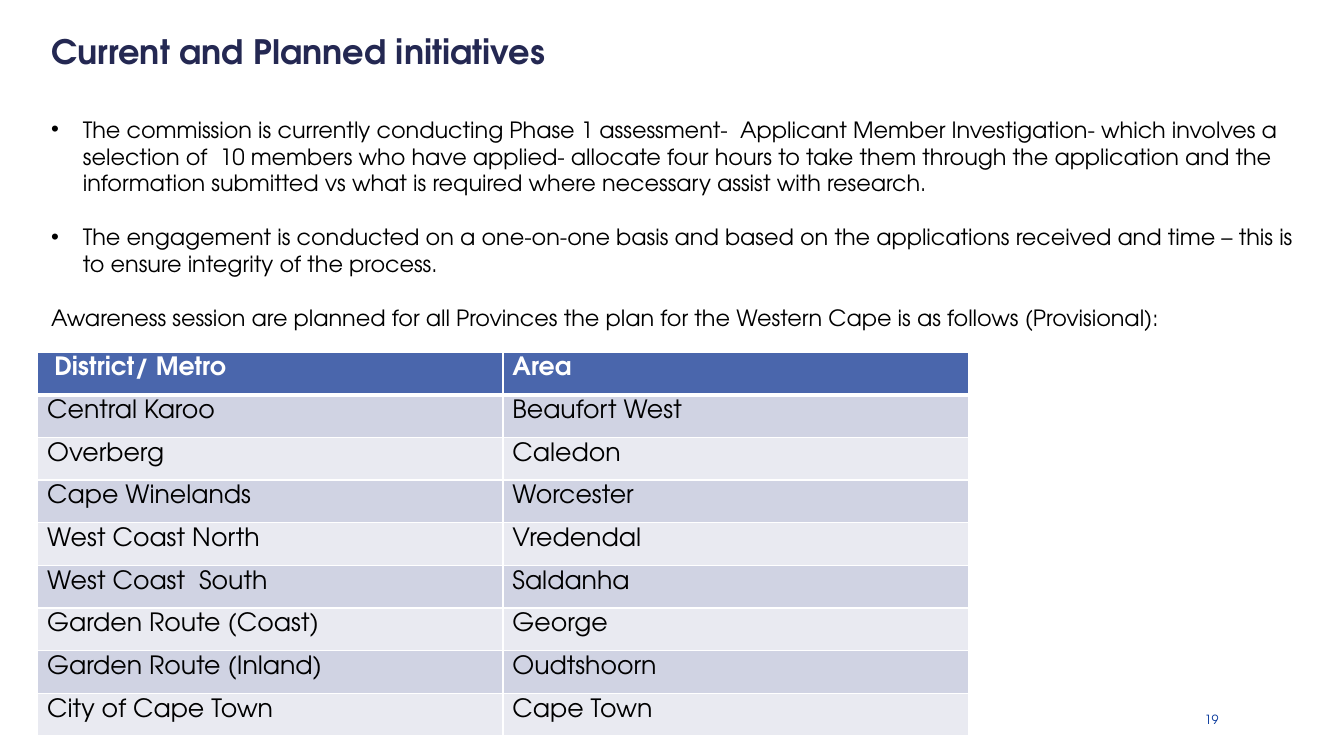
import pptx
import pptx.util
import pptx.dml.color
import pptx.enum.text
import pptx.oxml
import pptx.oxml.ns

Cm = pptx.util.Cm
Pt = pptx.util.Pt
RGBColor = pptx.dml.color.RGBColor
ALIGN = pptx.enum.text.PP_ALIGN
ANCHOR = pptx.enum.text.MSO_ANCHOR

FONT = "TeX Gyre Adventor"
NAVY = RGBColor(0x24, 0x28, 0x52)
BLUE = RGBColor(0x4A, 0x66, 0xAC)
LINK = RGBColor(0x00, 0x33, 0x99)
BLACK = RGBColor(0, 0, 0)
WHITE = RGBColor(0xFF, 0xFF, 0xFF)
DARK = RGBColor(0xD0, 0xD3, 0xE3)
LIGHT = RGBColor(0xE9, 0xEA, 0xF1)
NS = pptx.oxml.ns.nsdecls("a")


def write(para, text, size=16, color=BLACK, bold=False, align=ALIGN.LEFT, bullet=False):
    if bullet:
        props = para._p.get_or_add_pPr()
        props.set("marL", str(Cm(0.8)))
        props.set("indent", str(-Cm(0.8)))
        props.append(pptx.oxml.parse_xml(f'<a:buFont {NS} typeface="Arial"/>'))
        props.append(pptx.oxml.parse_xml(f'<a:buChar {NS} char="•"/>'))
    para.alignment = align
    run = para.add_run()
    run.text = text
    run.font.name = FONT
    run.font.size = Pt(size)
    run.font.bold = bold
    run.font.color.rgb = color


def place(shape, left, top, width, height, anchor, wrap=True, foot=0.2):
    shape.left, shape.top = Cm(left), Cm(top)
    shape.width, shape.height = Cm(width), Cm(height)
    frame = shape.text_frame
    frame.auto_size = pptx.enum.text.MSO_AUTO_SIZE.NONE
    frame.word_wrap = wrap
    frame.vertical_anchor = anchor
    frame.margin_left = frame.margin_top = Cm(0.2)
    frame.margin_right = frame.margin_bottom = Cm(foot)
    return frame


deck = pptx.Presentation()
deck.slide_width = Cm(33.87)
deck.slide_height = Cm(19.05)
slide = deck.slides.add_slide(deck.slide_layouts[5])

title = place(slide.shapes.title, 1.09, 0.51, 31.85, 1.55, ANCHOR.MIDDLE, wrap=False)
write(title.paragraphs[0], "Current and Planned initiatives", size=24, color=NAVY, bold=True)

box = slide.shapes.add_textbox(0, 0, 0, 0)
number = place(box, 28.8, 17.72, 1.91, 0.64, ANCHOR.MIDDLE, foot=0)
write(number.paragraphs[0], "19", size=9, color=LINK, align=ALIGN.RIGHT)

points = [
    ("The commission is currently conducting Phase 1 assessment-  Applicant Member "
     "Investigation- which involves a selection of  10 members who have applied- allocate "
     "four hours to take them through the application and the information submitted vs "
     "what is required where necessary assist with research.", True),
    ("The engagement is conducted on a one-on-one basis and based on the applications "
     "received and time – this is to ensure integrity of the process.", True),
    ("Awareness session are planned for all Provinces the plan for the Western Cape is "
     "as follows (Provisional):", False),
]
box = slide.shapes.add_textbox(0, 0, 0, 0)
body = place(box, 1.09, 2.72, 31.85, 13.59, ANCHOR.TOP)
for i, (text, bullet) in enumerate(points):
    para = body.add_paragraph() if i else body.paragraphs[0]
    write(para, text, bullet=bullet)
    if i:
        para.space_before = Pt(19.2)

rows = [
    (" District/ Metro", "Area"),
    ("Central Karoo", "Beaufort West"),
    ("Overberg", "Caledon"),
    ("Cape Winelands", "Worcester"),
    ("West Coast North", "Vredendal"),
    ("West Coast  South", "Saldanha"),
    ("Garden Route (Coast)", "George"),
    ("Garden Route (Inland)", "Oudtshoorn"),
    ("City of Cape Town", "Cape Town"),
]
table = slide.shapes.add_table(len(rows), 2, Cm(0.95), Cm(8.87), Cm(23.45), Cm(9.68)).table
for r, row in enumerate(rows):
    head = r == 0
    fill = BLUE if head else DARK if r % 2 else LIGHT
    edges = {"L": 1, "R": 1, "T": 3 if r == 1 else 1, "B": 3 if head else 1}
    for c, text in enumerate(row):
        cell = table.cell(r, c)
        props = cell._tc.get_or_add_tcPr()
        for side, width in edges.items():
            props.append(pptx.oxml.parse_xml(
                f'<a:ln{side} {NS} w="{Pt(width)}"><a:solidFill>'
                f'<a:srgbClr val="{WHITE}"/></a:solidFill></a:ln{side}>'))
        cell.fill.solid()
        cell.fill.fore_color.rgb = fill
        cell.margin_left = cell.margin_right = Cm(0.24)
        cell.margin_top = cell.margin_bottom = Cm(0.13)
        write(cell.text_frame.paragraphs[0], text, size=18,
              color=WHITE if head else BLACK, bold=head)

deck.save("out.pptx")
